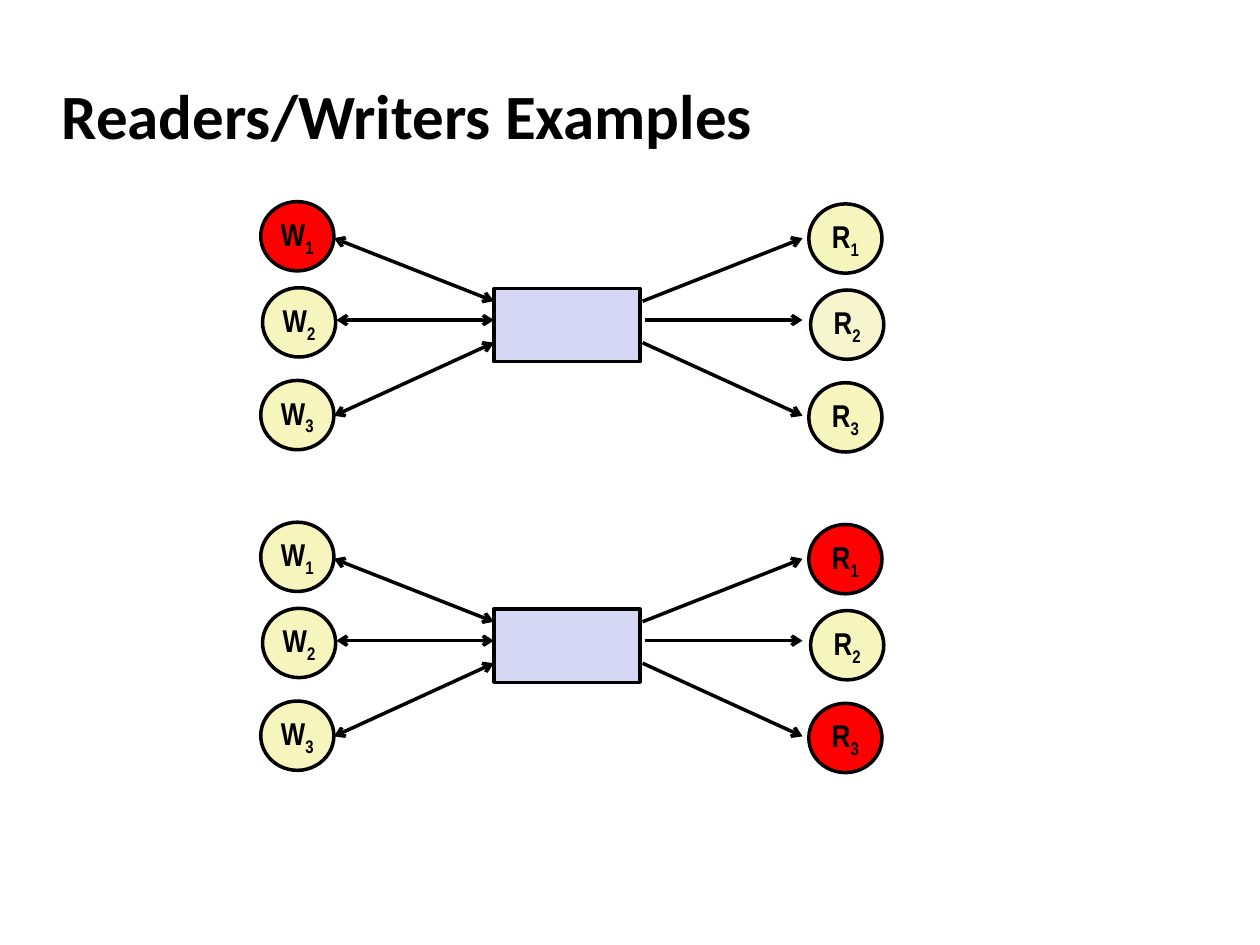
"""Build the Readers/Writers Examples slide."""
from lxml import etree
from pptx import Presentation
from pptx.dml.color import RGBColor
from pptx.enum.shapes import MSO_CONNECTOR, MSO_SHAPE
from pptx.enum.text import MSO_ANCHOR, PP_ALIGN
from pptx.oxml.ns import qn
from pptx.util import Pt

STRAIGHT = MSO_CONNECTOR.STRAIGHT
OVAL, RECTANGLE = MSO_SHAPE.OVAL, MSO_SHAPE.RECTANGLE
MIDDLE = MSO_ANCHOR.MIDDLE
LEFT, CENTER = PP_ALIGN.LEFT, PP_ALIGN.CENTER

COLORS = {
    "black": "000000",
    "active": "FF0000",
    "idle": "F6F5BD",
    "pale": "F7F5CD",
    "buffer": "D6D6F5",
}
TITLE = "Readers/Writers Examples"
EXAMPLES = [
    {"W": ("active", "idle", "idle"), "R": ("idle", "pale", "idle")},
    {"W": ("idle", "idle", "idle"), "R": ("active", "idle", "active")},
]
EXAMPLE_TOP, EXAMPLE_PITCH = 115.2, 183.2
CIRCLE_WIDTH, CIRCLE_HEIGHT = 41.8, 39.6
CIRCLE_ROWS = [(0, 0), (1, 49.2), (0, 102.2)]
BUFFER = (282.2, 49.7, 83.5, 41.8)
ARROW_ROWS = [(0, 20.9, 56.9), (1.4, 67.7, 67.7), (0, 122.4, 80.6)]
SIDES = {
    "W": {"left": 149, "drop": 0, "outer": 190.8, "inner": 282.2,
          "outer_shift": 1, "inner_shift": 0, "ends": ("headEnd", "tailEnd")},
    "R": {"left": 462.2, "drop": 1.3, "outer": 458.6, "inner": 367.2,
          "outer_shift": 0, "inner_shift": 1, "ends": ("headEnd",)},
}


def color(name):
    return RGBColor.from_string(COLORS[name])


def style_run(run, font_name, size):
    run.font.name = font_name
    run.font.size = Pt(size)
    run.font.bold = True
    run.font.color.rgb = color("black")


def style_line(line):
    line.color.rgb = color("black")
    line.width = Pt(2)


def add_title(slide):
    title = slide.shapes.title
    title.left, title.top, title.width, title.height = Pt(28), Pt(35.3), Pt(597.6), Pt(59.8)
    title.text_frame.text = TITLE
    title.text_frame.vertical_anchor = MIDDLE
    paragraph = title.text_frame.paragraphs[0]
    paragraph.alignment = LEFT
    style_run(paragraph.runs[0], "Calibri", 36)


def add_box(slide, kind, left, top, width, height, fill):
    shape = slide.shapes.add_shape(kind, Pt(left), Pt(top), Pt(width), Pt(height))
    shape.shadow.inherit = False
    shape.fill.solid()
    shape.fill.fore_color.rgb = color(fill)
    style_line(shape.line)
    return shape


def add_circle(slide, left, top, letter, number, fill):
    circle = add_box(slide, OVAL, left, top, CIRCLE_WIDTH, CIRCLE_HEIGHT, fill)
    frame = circle.text_frame
    frame.word_wrap = False
    frame.vertical_anchor = MIDDLE
    frame.margin_top = frame.margin_bottom = 0
    paragraph = frame.paragraphs[0]
    paragraph.alignment = CENTER
    for text in (letter, str(number)):
        run = paragraph.add_run()
        run.text = text
        style_run(run, "Arial Narrow", 18)
    run.font._element.set("baseline", "-25000")


def add_arrow(slide, start, end, ends):
    points = [Pt(value) for value in (*start, *end)]
    arrow = slide.shapes.add_connector(STRAIGHT, *points)
    style_line(arrow.line)
    properties = arrow._element.spPr
    for name in ends:
        etree.SubElement(properties.find(qn("a:ln")), qn(f"a:{name}"), type="arrow")
    etree.SubElement(properties, qn("a:effectLst"))


def add_example(slide, top, fills):
    left, drop, width, height = BUFFER
    add_box(slide, RECTANGLE, left, top + drop, width, height, "buffer")
    for letter, side in SIDES.items():
        for shift, outer_y, inner_y in ARROW_ROWS:
            start = (side["outer"] + shift * side["outer_shift"], top + outer_y)
            end = (side["inner"] + shift * side["inner_shift"], top + inner_y)
            add_arrow(slide, start, end, side["ends"])
        for number, ((shift, row), fill) in enumerate(zip(CIRCLE_ROWS, fills[letter]), 1):
            add_circle(slide, side["left"] + shift, top + side["drop"] + row,
                       letter, number, fill)


def main():
    presentation = Presentation()
    presentation.slide_width, presentation.slide_height = Pt(720), Pt(540)
    slide = presentation.slides.add_slide(presentation.slide_layouts[5])
    add_title(slide)
    for index, fills in enumerate(EXAMPLES):
        add_example(slide, EXAMPLE_TOP + index * EXAMPLE_PITCH, fills)
    presentation.save("out.pptx")


if __name__ == "__main__":
    main()
